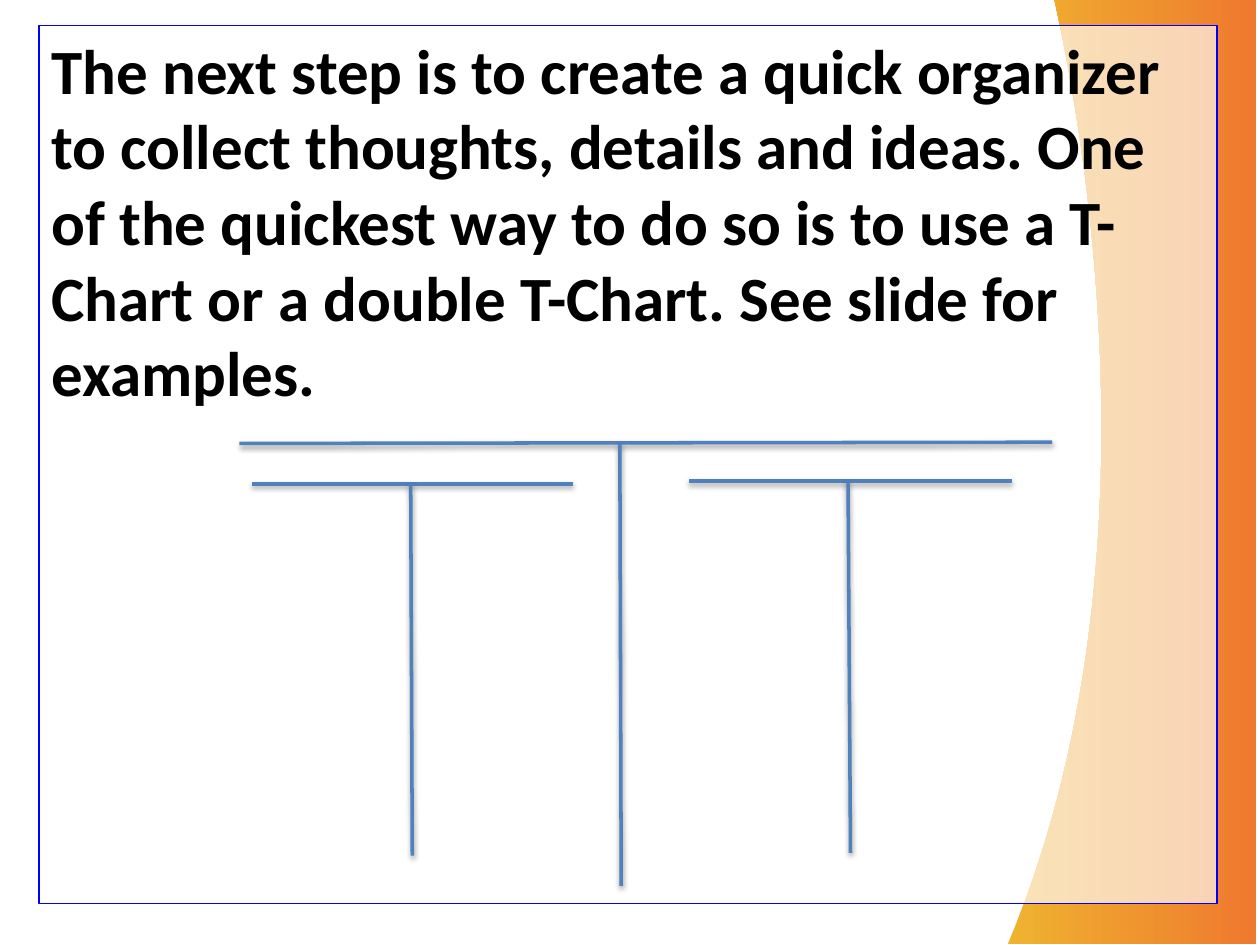
from dataclasses import dataclass

from lxml.etree import SubElement
from pptx import Presentation
from pptx.dml.color import RGBColor as Color
from pptx.enum.shapes import MSO_CONNECTOR as Connector, MSO_SHAPE as Shape
from pptx.enum.text import MSO_ANCHOR as Anchor, PP_ALIGN as Align
from pptx.oxml import parse_xml
from pptx.oxml.ns import nsdecls, qn
from pptx.util import Pt


@dataclass(frozen=True)
class Theme:
    font: str = "Calibri"
    text_size: float = 36
    text: str = "000000"
    panel: str = "FFFFFF"
    panel_opacity: int = 65
    border: str = "0000FF"
    border_width: float = 0.75
    chart_line: str = "4F81BD"
    chart_width: float = 2
    gradient: tuple = ("EFB32F", "EF792F")


THEME = Theme()
SLIDE_SIZE = (720, 540)
MESSAGE = (
    "The next step is to create a quick organizer to collect thoughts, details and ideas. "
    "One of the quickest way to do so is to use a T-Chart or a double T-Chart. "
    "See slide for examples."
)
PANEL = (22.3, 14.4, 673.2, 501.8)
SWOOSH_RIGHT = 717.8
SWOOSH_CURVE = ((602.6, 0), (617, 65.5), (667.4, 323.3), (576, 539.3))
CURVE_STEPS = 48
T_CHARTS = [
    {"bar": (136.8, 253.4, 601.2, 252.7), "stem": (354.2, 253.4, 355, 506.2)},
    {"bar": (144, 276.5, 327.6, 276.5), "stem": (234.7, 276.5, 235.6, 488.9)},
    {"bar": (393.8, 275, 578.2, 275), "stem": (484.6, 275, 486, 487.4)},
]
SHADOW = (
    f'<a:effectLst {nsdecls("a")}><a:outerShdw blurRad="{Pt(3.1)}" dist="{Pt(1.6)}" '
    'dir="5400000" rotWithShape="0"><a:srgbClr val="000000"><a:alpha val="38000"/>'
    "</a:srgbClr></a:outerShdw></a:effectLst>"
)


def curve_point(t):
    weights = ((1 - t) ** 3, 3 * t * (1 - t) ** 2, 3 * t**2 * (1 - t), t**3)
    return tuple(
        Pt(sum(w * point[axis] for w, point in zip(weights, SWOOSH_CURVE)))
        for axis in (0, 1)
    )


def add_swoosh(slide):
    bottom = SWOOSH_CURVE[-1][1]
    builder = slide.shapes.build_freeform(Pt(SWOOSH_RIGHT), 0)
    points = [curve_point(step / CURVE_STEPS) for step in range(CURVE_STEPS + 1)]
    builder.add_line_segments(points + [(Pt(SWOOSH_RIGHT), Pt(bottom))], close=True)
    shape = builder.convert_to_shape()
    shape.shadow.inherit = False
    shape.line.fill.background()
    shape.fill.gradient()
    shape.fill.gradient_angle = 0
    for position, (stop, color) in enumerate(zip(shape.fill.gradient_stops, THEME.gradient)):
        stop.position = position
        stop.color.rgb = Color.from_string(color)


def add_panel(slide):
    shape = slide.shapes.add_shape(Shape.RECTANGLE, *map(Pt, PANEL))
    shape.shadow.inherit = False
    shape.fill.solid()
    shape.fill.fore_color.rgb = Color.from_string(THEME.panel)
    fill_color = shape._element.spPr.find(qn("a:solidFill"))[0]
    SubElement(fill_color, qn("a:alpha"), val=str(THEME.panel_opacity * 1000))
    shape.line.color.rgb = Color.from_string(THEME.border)
    shape.line.width = Pt(THEME.border_width)
    frame = shape.text_frame
    frame.word_wrap = True
    frame.vertical_anchor = Anchor.TOP
    frame.text = MESSAGE
    paragraph = frame.paragraphs[0]
    paragraph.alignment = Align.LEFT
    font = paragraph.runs[0].font
    font.name, font.size, font.bold = THEME.font, Pt(THEME.text_size), True
    font.color.rgb = Color.from_string(THEME.text)


def add_chart_line(slide, ends):
    connector = slide.shapes.add_connector(Connector.STRAIGHT, *map(Pt, ends))
    connector.line.color.rgb = Color.from_string(THEME.chart_line)
    connector.line.width = Pt(THEME.chart_width)
    connector._element.spPr.append(parse_xml(SHADOW))


def main():
    """Build the T-Chart organizer slide."""
    presentation = Presentation()
    presentation.slide_width, presentation.slide_height = map(Pt, SLIDE_SIZE)
    slide = presentation.slides.add_slide(presentation.slide_layouts[6])
    add_swoosh(slide)
    add_panel(slide)
    for chart in T_CHARTS:
        for ends in chart.values():
            add_chart_line(slide, ends)
    presentation.save("out.pptx")


if __name__ == "__main__":
    main()
